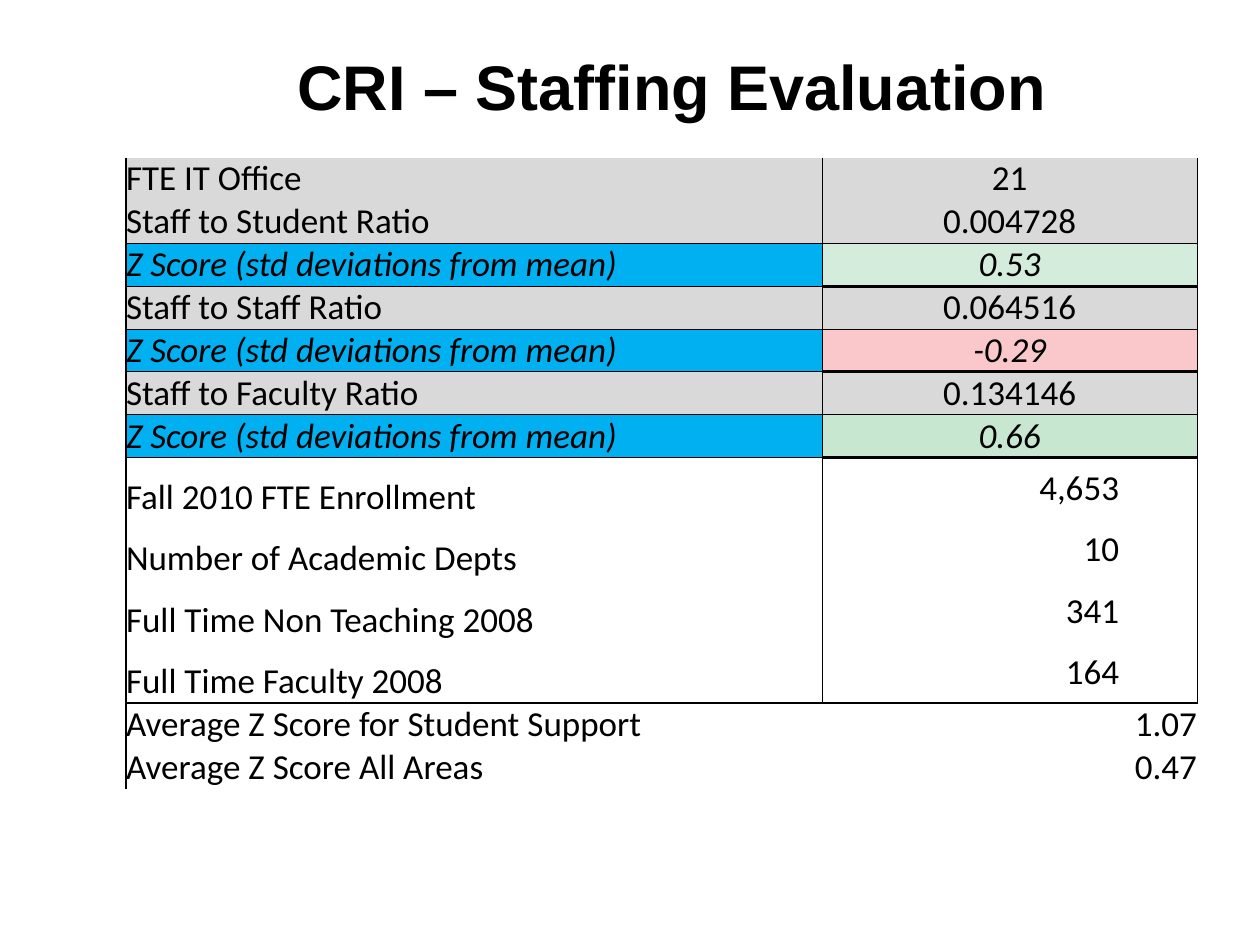
from dataclasses import dataclass

from lxml import etree
from pptx import Presentation
from pptx.dml.color import RGBColor
from pptx.enum import text
from pptx.oxml import ns
from pptx.util import Pt

BLACK, WHITE, GREY, BLUE = "000000", "FFFFFF", "D9D9D9", "00B0F0"
NO_GRID_STYLE = "{2D5ABB26-0587-4C30-8999-92F81FD0307C}"
LEFT, CENTER, RIGHT = text.PP_ALIGN.LEFT, text.PP_ALIGN.CENTER, text.PP_ALIGN.RIGHT
MIDDLE, BOTTOM = text.MSO_ANCHOR.MIDDLE, text.MSO_ANCHOR.BOTTOM


@dataclass
class Band:
    """Look shared by the rows of one kind."""
    label_fill: str
    align: int
    anchor: int
    height: float = 24.5
    italic: bool = False
    inset: float = 0
    divider: float = 0.5


RATIO = Band(GREY, CENTER, MIDDLE)
SCORE = Band(BLUE, CENTER, MIDDLE, italic=True)
COUNT = Band(WHITE, RIGHT, MIDDLE, height=35.1, inset=44.5)
AVERAGE = Band(WHITE, RIGHT, BOTTOM, divider=0)

Z_LABEL = "Z Score (std deviations from mean)"
# label, value, band, value fill, rule below label, rule below value
ROWS = [
    ("FTE IT Office", "21", RATIO, GREY, 0, 0),
    ("Staff to Student Ratio", "0.004728", RATIO, GREY, 0.5, 0.5),
    (Z_LABEL, "0.53", SCORE, "D3ECDC", 0.5, 2),
    ("Staff to Staff Ratio", "0.064516", RATIO, GREY, 0.5, 0.5),
    (Z_LABEL, "-0.29", SCORE, "FAC7CA", 0.5, 2),
    ("Staff to Faculty Ratio", "0.134146", RATIO, GREY, 0.5, 0.5),
    (Z_LABEL, "0.66", SCORE, "C7E7D1", 0.5, 2),
    ("Fall 2010 FTE Enrollment", "4,653", COUNT, WHITE, 0, 0),
    ("Number of Academic Depts", "10", COUNT, WHITE, 0, 0),
    ("Full Time Non Teaching 2008", "341", COUNT, WHITE, 0, 0),
    ("Full Time Faculty 2008", "164", COUNT, WHITE, 1, 1),
    ("Average Z Score for Student Support", "1.07", AVERAGE, WHITE, 0, 0),
    ("Average Z Score All Areas", "0.47", AVERAGE, WHITE, 0, 0),
]


def color(value):
    """Turn a hex string into a colour."""
    return RGBColor.from_string(value)


def write(frame, words, size, face, align, bold=False, italic=False):
    """Write one run into the first paragraph of a frame."""
    line = frame.paragraphs[0]
    line.alignment = align
    run = line.add_run()
    run.text = words
    run.font.size, run.font.name = Pt(size), face
    run.font.bold, run.font.italic = bold, italic
    run.font.color.rgb = color(BLACK)


def rule_cell(cell, left, right, top, bottom):
    """Draw the borders of a cell, with zero meaning none."""
    properties = cell._tc.get_or_add_tcPr()
    widths = {"L": left, "R": right, "T": top, "B": bottom}
    for place, (side, width) in enumerate(widths.items()):
        border = etree.Element(ns.qn(f"a:ln{side}"), w=str(Pt(width)))
        if width:
            paint = etree.SubElement(border, ns.qn("a:solidFill"))
            etree.SubElement(paint, ns.qn("a:srgbClr"), val=BLACK)
        else:
            etree.SubElement(border, ns.qn("a:noFill"))
        properties.insert(place, border)


def fill_cell(cell, words, fill, align, anchor, italic, inset=0):
    """Give a cell its text, fill and insets."""
    cell.margin_left = cell.margin_top = cell.margin_bottom = 0
    cell.margin_right = Pt(inset)
    cell.vertical_anchor = anchor
    cell.fill.solid()
    cell.fill.fore_color.rgb = color(fill)
    write(cell.text_frame, words, 20, "Calibri", align, italic=italic)


def add_title(slide, left, top, width, height):
    """Place the heading in its box."""
    frame = slide.shapes.add_textbox(Pt(left), Pt(top), Pt(width), Pt(height)).text_frame
    frame.word_wrap = True
    frame.vertical_anchor = MIDDLE
    write(frame, "CRI – Staffing Evaluation", 36, "Arial", CENTER, bold=True)


def add_staffing_table(slide, left, top, width):
    """Place the staffing figures in two columns."""
    height = sum(row[2].height for row in ROWS)
    table = slide.shapes.add_table(
        len(ROWS), 2, Pt(left), Pt(top), Pt(width), Pt(height)).table
    table.first_row = table.horz_banding = False
    table._tbl.tblPr.find(ns.qn("a:tableStyleId")).text = NO_GRID_STYLE
    label_width = round(width * 0.651)
    table.columns[0].width = Pt(label_width)
    table.columns[1].width = Pt(width - label_width)

    label_top = value_top = 0
    for index, (label, value, band, value_fill, label_rule, value_rule) in enumerate(ROWS):
        table.rows[index].height = Pt(band.height)
        label_cell, value_cell = table.cell(index, 0), table.cell(index, 1)
        fill_cell(label_cell, label, band.label_fill, LEFT, BOTTOM, band.italic)
        fill_cell(value_cell, value, value_fill, band.align, band.anchor,
                  band.italic, band.inset)
        rule_cell(label_cell, 1, band.divider, label_top, label_rule)
        rule_cell(value_cell, band.divider, band.divider, value_top, value_rule)
        label_top, value_top = label_rule, value_rule


def main():
    """Build the slide and save it."""
    deck = Presentation()
    deck.slide_width, deck.slide_height = Pt(720), Pt(540)
    slide = deck.slides.add_slide(deck.slide_layouts[6])
    add_title(slide, 78, 24, 612, 50)
    add_staffing_table(slide, 72, 90, 612)
    deck.save("out.pptx")


if __name__ == "__main__":
    main()
